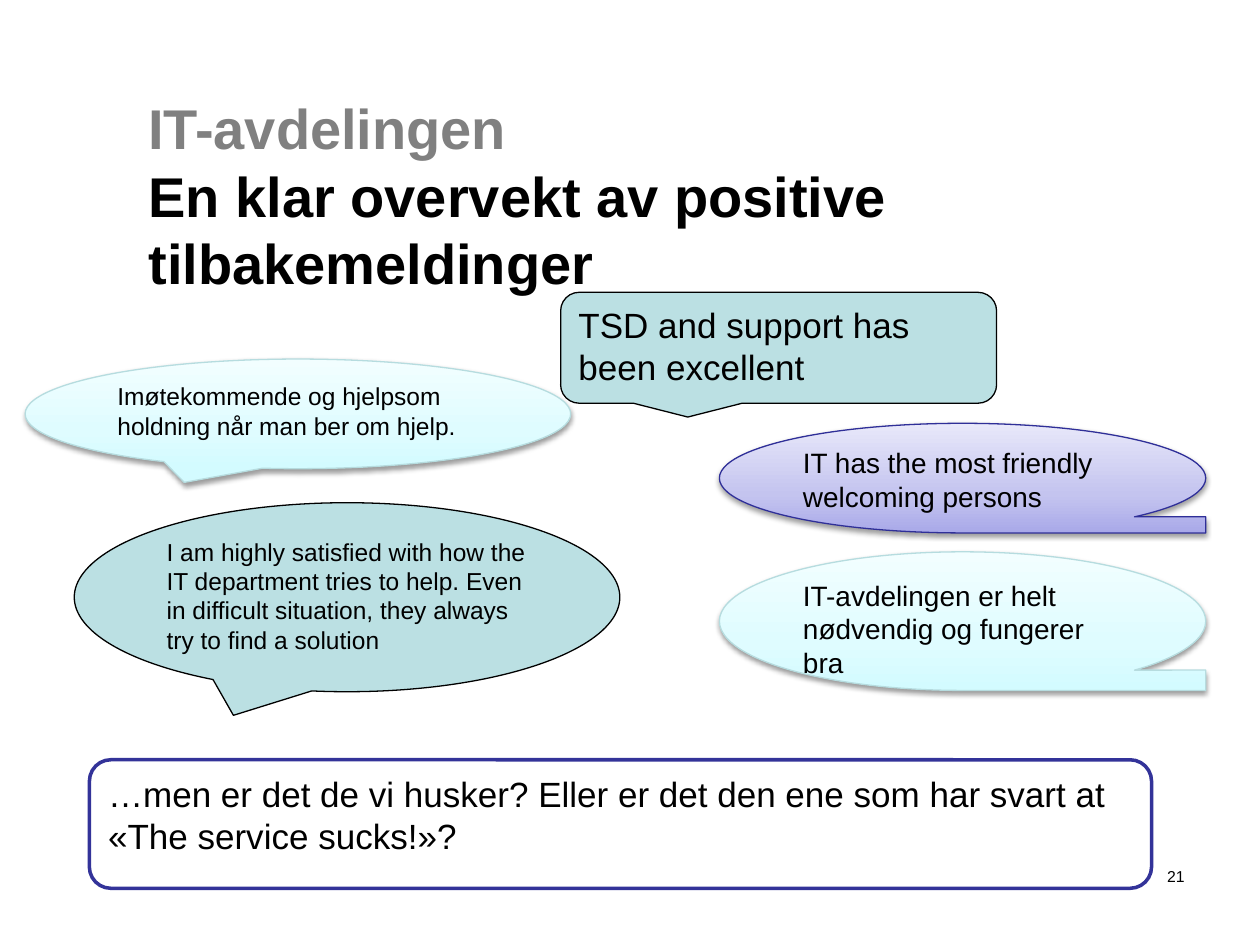
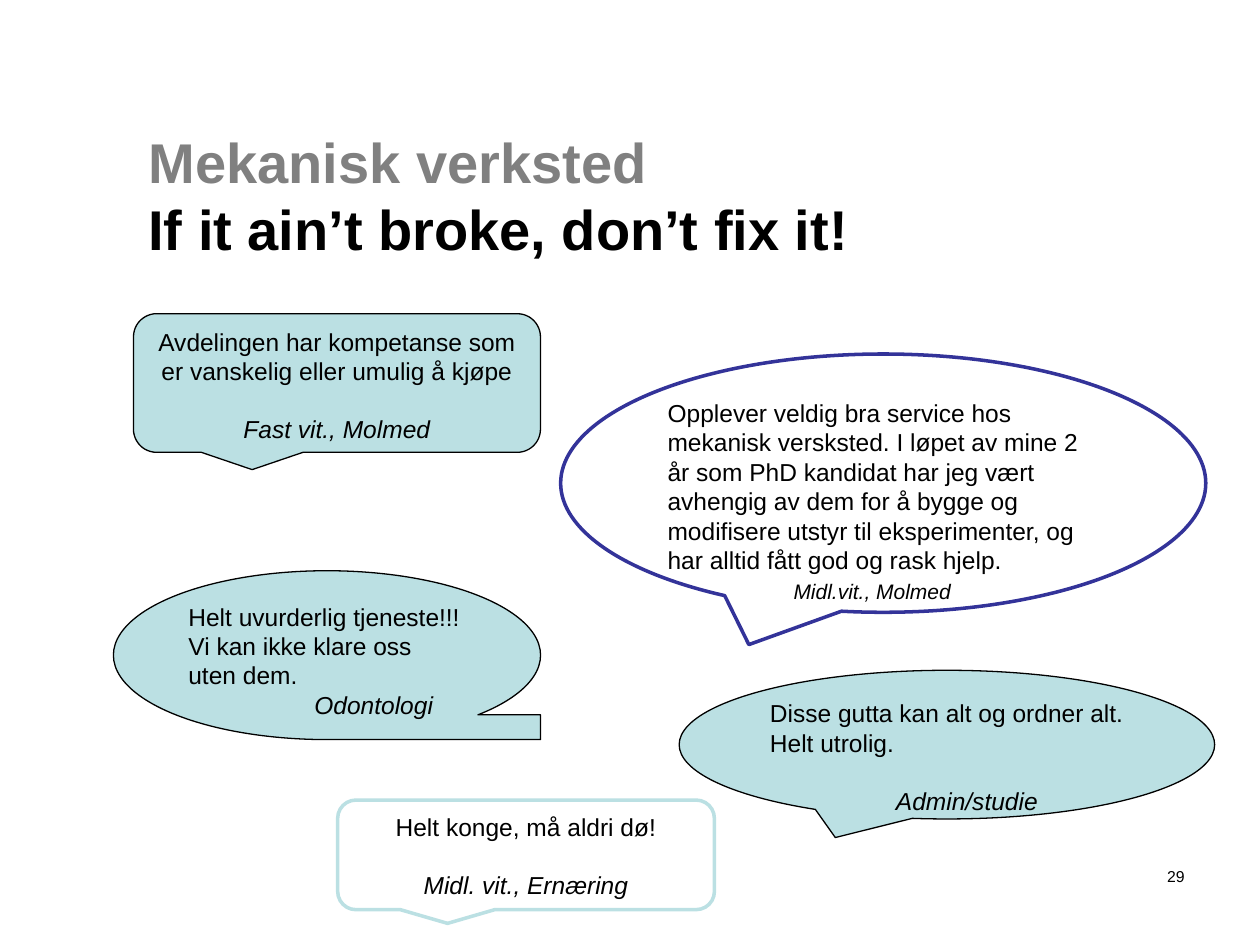
from lxml import etree
from pptx import Presentation
from pptx.dml.color import RGBColor
from pptx.enum.shapes import MSO_SHAPE as Shape
from pptx.enum.text import MSO_ANCHOR as Anchor, PP_ALIGN as Align
from pptx.oxml import parse_xml
from pptx.util import Inches, Pt

# Shared colours and type
BLACK = RGBColor(0x00, 0x00, 0x00)
WHITE = RGBColor(0xFF, 0xFF, 0xFF)
GREY = RGBColor(0x80, 0x80, 0x80)
TEAL = RGBColor(0xBB, 0xE0, 0xE3)
NAVY = RGBColor(0x33, 0x33, 0x99)
PALE = RGBColor(0xB6, 0xDC, 0xDF)
INDIGO = RGBColor(0x2F, 0x2F, 0x98)
FONT = "Arial"
NS = "http://schemas.openxmlformats.org/drawingml/2006/main"

# Gradients: (position in percent, colour), rising from the bottom edge
ICE = [(0, RGBColor(0xD3, 0xFB, 0xFF)), (35, RGBColor(0xDF, 0xFC, 0xFF)),
       (100, RGBColor(0xF2, 0xFE, 0xFF))]
LILAC = [(0, RGBColor(0xA9, 0xA9, 0xE9)), (35, RGBColor(0xC4, 0xC4, 0xEF)),
         (100, RGBColor(0xE8, 0xE8, 0xFA))]

# Looks: fill, line colour, line width
SOLID = (TEAL, BLACK, 0.75)
FRAME = (WHITE, NAVY, 2)
LIGHT = (WHITE, TEAL, 2)
COOL = (ICE, PALE, 0.75)
VIOLET = (LILAC, INDIGO, 0.75)

# Outlines
BAR = Shape.ROUNDED_RECTANGLE
TAPE = Shape.FLOWCHART_SEQUENTIAL_ACCESS_STORAGE
OVAL = Shape.OVAL_CALLOUT
ROUND = Shape.ROUNDED_RECTANGULAR_CALLOUT


def add_run(para, text, size, color=BLACK, bold=False, italic=False):
    run = para.add_run()
    run.text = text
    font = run.font
    font.name, font.size = FONT, Pt(size)
    font.bold, font.italic = bold, italic
    font.color.rgb = color


def add_box(slide, box):
    frame = slide.shapes.add_textbox(*map(Inches, box)).text_frame
    frame.word_wrap = True
    return frame


def add_title(slide, topic, claim):
    frame = add_box(slide, (1.08, 0.92, 8.42, 1.25))
    frame.vertical_anchor = Anchor.MIDDLE
    para = frame.paragraphs[0]
    add_run(para, topic, 32, GREY, bold=True)
    para.add_line_break()
    add_run(para, claim, 32, bold=True)


def add_number(slide, number):
    para = add_box(slide, (8.75, 6.83, 0.75, 0.5)).paragraphs[0]
    para.alignment = Align.RIGHT
    add_run(para, number, 9)


def shade(shape, stops):
    """Gradient fill with a soft shadow below."""
    marks = "".join(f'<a:gs pos="{pos * 1000}"><a:srgbClr val="{color}"/></a:gs>'
                    for pos, color in stops)
    fill = parse_xml(f'<a:gradFill xmlns:a="{NS}" rotWithShape="1"><a:gsLst>{marks}'
                     '</a:gsLst><a:lin ang="16200000" scaled="0"/></a:gradFill>')
    props = shape.fill._xPr
    props.find(f"{{{NS}}}prstGeom").addnext(fill)
    drop = etree.SubElement(props.find(f"{{{NS}}}effectLst"), f"{{{NS}}}outerShdw",
                            blurRad=str(Pt(3.1)), dist=str(Pt(1.6)),
                            dir="5400000", rotWithShape="0")
    tint = etree.SubElement(drop, f"{{{NS}}}srgbClr", val=str(BLACK))
    etree.SubElement(tint, f"{{{NS}}}alpha", val="38000")


def add_quote(slide, box, kind, look, size, quote, source="", small=14, gap=0):
    """One balloon; the source is centred in round boxes, else indented."""
    shape = slide.shapes.add_shape(kind, *map(Inches, box))
    shape.shadow.inherit = False
    fill, line, width = look
    shape.line.color.rgb = line
    shape.line.width = Pt(width)
    if isinstance(fill, list):
        shade(shape, fill)
    else:
        shape.fill.solid()
        shape.fill.fore_color.rgb = fill
    frame = shape.text_frame
    frame.word_wrap = True
    frame.vertical_anchor = Anchor.TOP
    para = frame.paragraphs[0]
    centred = bool(source) and kind == ROUND
    para.alignment = Align.CENTER if centred else Align.LEFT
    add_run(para, quote, size)
    if source:
        note = frame.add_paragraph()
        note.alignment = para.alignment
        note.space_before = Pt(gap)
        if not centred:
            note._p.get_or_add_pPr().set("marL", str(Inches(1)))
        add_run(note, source, small, italic=True)


def add_page(deck, topic, claim, number, quotes):
    slide = deck.slides.add_slide(deck.slide_layouts[6])
    add_title(slide, topic, claim)
    add_number(slide, number)
    for quote in quotes:
        add_quote(slide, *quote)


PRAISE = [
    ((0.71, 6.03, 8.43, 1.02), BAR, FRAME, 20,
     "…men er det de vi husker? Eller er det den ene som har svart at "
     "«The service sucks!»?"),
    ((5.71, 4.38, 3.86, 1.1), TAPE, COOL, 16,
     "IT-avdelingen er helt nødvendig og fungerer bra"),
    ((0.59, 3.99, 4.33, 1.5), OVAL, SOLID, 14,
     "I am highly satisfied with how the IT department tries to help. Even in "
     "difficult situation, they always try to find a solution"),
    ((0.2, 2.85, 4.33, 0.87), OVAL, COOL, 14,
     "Imøtekommende og hjelpsom holdning når man ber om hjelp."),
    ((5.71, 3.36, 3.86, 0.87), TAPE, VIOLET, 16,
     "IT has the most friendly welcoming persons"),
    ((4.45, 2.32, 3.46, 0.88), ROUND, SOLID, 20,
     "TSD and support has been excellent"),
]

WORKSHOP = [
    ((5.39, 5.32, 4.25, 1.18), OVAL, SOLID, 14,
     "Disse gutta kan alt og ordner alt. Helt utrolig.", "Admin/studie", 14, 16.5),
    ((1.06, 2.49, 3.23, 1.1), ROUND, SOLID, 14,
     "Avdelingen har kompetanse som er vanskelig eller umulig å kjøpe",
     "Fast vit., Molmed", 14, 16.5),
    ((4.45, 2.81, 5.12, 2.05), OVAL, FRAME, 14,
     "Opplever veldig bra service hos mekanisk versksted. I løpet av mine 2 år "
     "som PhD kandidat har jeg vært avhengig av dem for å bygge og modifisere "
     "utstyr til eksperimenter, og har alltid fått god og rask hjelp.",
     "Midl.vit., Molmed", 12, 2),
    ((2.68, 6.35, 2.99, 0.87), ROUND, LIGHT, 14,
     "Helt konge, må aldri dø!", "Midl. vit., Ernæring", 14, 16.5),
    ((0.9, 4.53, 3.39, 1.34), TAPE, SOLID, 14,
     "Helt uvurderlig tjeneste!!! Vi kan ikke klare oss uten dem.", "Odontologi"),
]


def main():
    deck = Presentation()
    deck.slide_width, deck.slide_height = Inches(10), Inches(7.5)
    add_page(deck, "IT-avdelingen",
             "En klar overvekt av positive tilbakemeldinger", "21", PRAISE)
    add_page(deck, "Mekanisk verksted",
             "If it ain’t broke, don’t fix it!", "29", WORKSHOP)
    deck.save("out.pptx")


if __name__ == "__main__":
    main()
